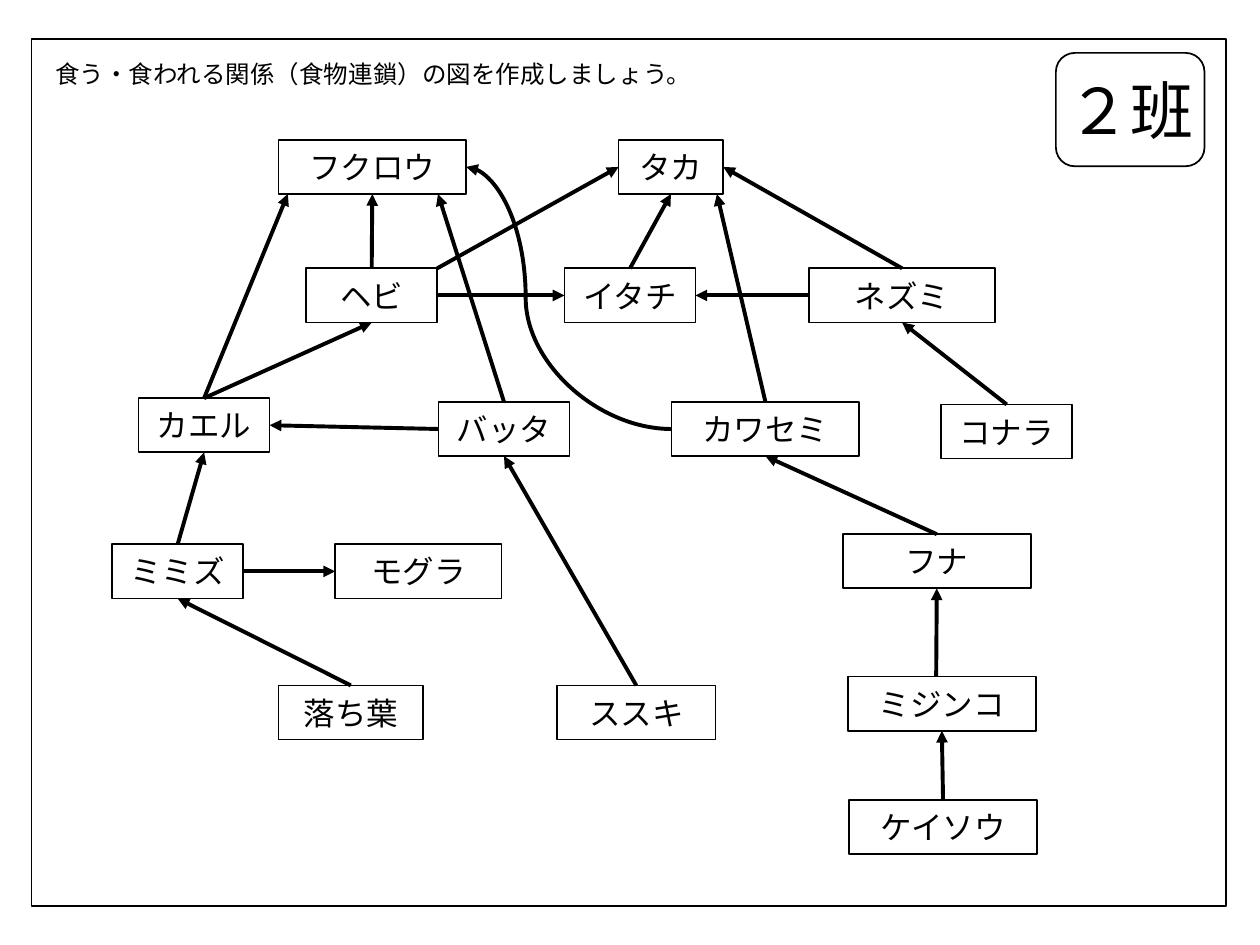
from lxml.etree import SubElement
from pptx import Presentation
from pptx.dml.color import RGBColor
from pptx.enum.shapes import MSO_CONNECTOR as CXN, MSO_SHAPE as SHAPE
from pptx.enum.text import MSO_ANCHOR as ANCHOR, MSO_AUTO_SIZE as AUTO, PP_ALIGN as ALIGN
from pptx.oxml.ns import qn
from pptx.util import Emu, Pt

PX = 9144  # 100 px to the inch
FONT, BLACK, WHITE = "Calibri", "000000", "FFFFFF"
NODE_H = 43

# name: left, top, width, relative to the frame
SPECIES = {
    "カエル": (85, 285, 104),
    "バッタ": (323, 288, 104),
    "コナラ": (722, 290, 104),
    "ヘビ": (218, 182, 104),
    "フクロウ": (196, 80, 149),
    "イタチ": (423, 182, 104),
    "ネズミ": (617, 182, 148),
    "ミミズ": (64, 401, 104),
    "落ち葉": (196, 513, 115),
    "ススキ": (417, 513, 126),
    "タカ": (466, 80, 83),
    "カワセミ": (508, 288, 149),
    "フナ": (644, 393, 149),
    "ミジンコ": (648, 506, 149),
    "ケイソウ": (649, 604, 149),
    "モグラ": (241, 401, 132),
}

# Connection sites, and free points given as fractions of a box
TOP, LEFT, BOTTOM, RIGHT = range(4)
SITES = {TOP: (0.5, 0), LEFT: (0, 0.5), BOTTOM: (0.5, 1), RIGHT: (1, 0.5)}

# eaten, leaving from, eater, arriving at
ARROWS = [
    ("ケイソウ", TOP, "ミジンコ", BOTTOM),
    ("ミジンコ", (0.47, 0), "フナ", BOTTOM),
    ("フナ", TOP, "カワセミ", BOTTOM),
    ("カワセミ", TOP, "タカ", (0.94, 1)),
    ("カワセミ", LEFT, "フクロウ", RIGHT),
    ("ススキ", TOP, "バッタ", BOTTOM),
    ("バッタ", LEFT, "カエル", RIGHT),
    ("ミミズ", RIGHT, "モグラ", LEFT),
    ("落ち葉", TOP, "ミミズ", BOTTOM),
    ("ミミズ", TOP, "カエル", BOTTOM),
    ("カエル", TOP, "ヘビ", BOTTOM),
    ("ヘビ", TOP, "フクロウ", BOTTOM),
    ("ヘビ", RIGHT, "イタチ", LEFT),
    ("コナラ", TOP, "ネズミ", BOTTOM),
    ("ネズミ", LEFT, "イタチ", RIGHT),
    ("イタチ", TOP, "タカ", BOTTOM),
    ("ネズミ", TOP, "タカ", RIGHT),
    ("ヘビ", (1, 0), "タカ", LEFT),
    ("カエル", TOP, "フクロウ", (0.05, 1)),
    ("バッタ", TOP, "フクロウ", (0.85, 1)),
]
BENDS = {("カワセミ", "フクロウ"): 71000}  # curved arrows


def px(*values):
    return [Emu(v * PX) for v in values]


def paint(fmt, color):
    fmt.solid()
    fmt.fore_color.rgb = RGBColor.from_string(color)


def write(tf, text, size, align=None):
    p = tf.paragraphs[0]
    p.alignment = align
    r = p.add_run()
    r.text = text
    r.font.name, r.font.size = FONT, Pt(size)
    paint(r.font.fill, BLACK)


def box(s, x, y, w, h, kind=SHAPE.RECTANGLE, fill=WHITE, text=None, size=18):
    sp = s.shapes.add_shape(kind, *px(x, y, w, h))
    sp.shadow.inherit = False
    if fill:
        paint(sp.fill, fill)
    else:
        sp.fill.background()
    paint(sp.line.fill, BLACK)
    sp.line.width = Pt(1)
    if text:
        tf = sp.text_frame
        tf.word_wrap = False  # every label stays on one line
        tf.vertical_anchor = ANCHOR.MIDDLE
        write(tf, text, size, ALIGN.CENTER)
    return sp


def point(sp, site):
    fx, fy = SITES.get(site, site)
    return Emu(round(sp.left + fx * sp.width)), Emu(round(sp.top + fy * sp.height))


def arrow(s, eaten, start, eater, end, bend=None):
    kind = CXN.CURVE if bend else CXN.STRAIGHT
    cxn = s.shapes.add_connector(kind, *point(eaten, start), *point(eater, end))
    if start in SITES:
        cxn.begin_connect(eaten, start)
    if end in SITES:
        cxn.end_connect(eater, end)
    paint(cxn.line.fill, BLACK)
    cxn.line.width = Pt(2.25)
    sp_pr = cxn._element.spPr
    SubElement(sp_pr.find(qn("a:ln")), qn("a:tailEnd"), type="triangle")
    SubElement(sp_pr, qn("a:effectLst"))
    if bend:
        guides = sp_pr.find(qn("a:prstGeom")).get_or_add_avLst()
        SubElement(guides, qn("a:gd"), name="adj1", fmla=f"val {bend}")


def instruction(s, x, y, w, h):
    tf = s.shapes.add_textbox(*px(x, y, w, h)).text_frame
    tf.word_wrap = True
    tf.auto_size = AUTO.SHAPE_TO_FIT_TEXT
    write(tf, "食う・食われる関係（食物連鎖）の図を作成しましょう。", 14)


def food_web(s, x, y):
    nodes = {name: box(s, x + dx, y + dy, w, NODE_H, text=name)
             for name, (dx, dy, w) in SPECIES.items()}
    for eaten, start, eater, end in ARROWS:
        arrow(s, nodes[eaten], start, nodes[eater], end, BENDS.get((eaten, eater)))


def worksheet(s, x, y, w, h):
    # Frame and instruction
    box(s, x, y, w, h, fill=None)
    instruction(s, x + 9, y + 11, w - 35, 34)
    # Species and arrows
    food_web(s, x, y)
    # Group badge
    box(s, x + w - 135, y + 11, 118, 90, SHAPE.ROUNDED_RECTANGLE, text="２班", size=36)


def main():
    prs = Presentation()
    prs.slide_width, prs.slide_height = px(1000, 750)
    s = prs.slides.add_slide(prs.slide_layouts[6])
    paint(s.background.fill, WHITE)
    worksheet(s, 25, 31, 948, 688)
    prs.save("out.pptx")


if __name__ == "__main__":
    main()
